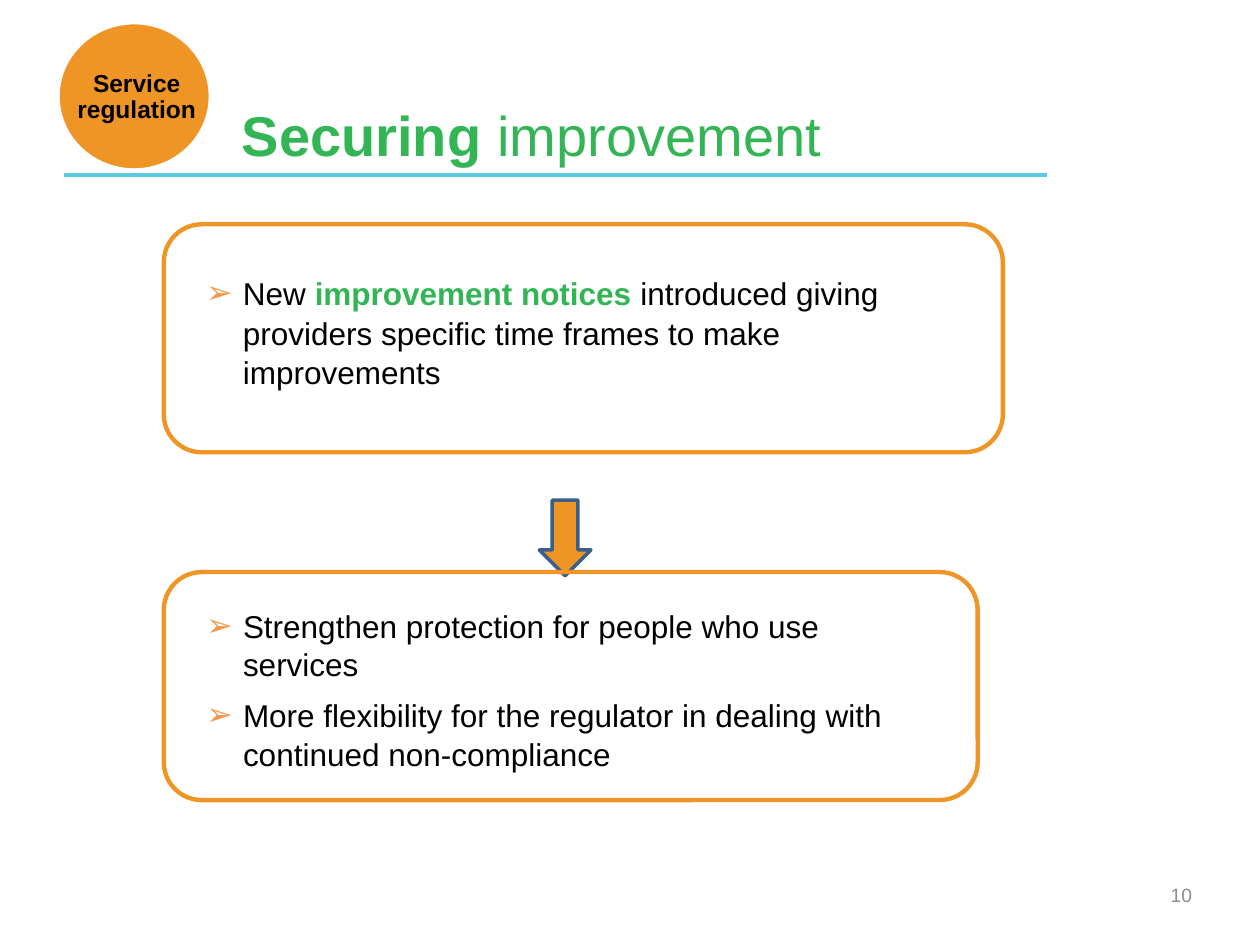
from dataclasses import dataclass

from lxml.etree import SubElement
from pptx import Presentation
from pptx.dml.color import RGBColor
from pptx.enum.shapes import MSO_CONNECTOR, MSO_SHAPE
from pptx.enum.text import MSO_ANCHOR, PP_ALIGN
from pptx.oxml.ns import qn
from pptx.util import Inches, Pt

ORANGE = RGBColor(0xEF, 0x95, 0x26)
BULLET_ORANGE = RGBColor(0xF7, 0x96, 0x46)
GREEN = RGBColor(0x34, 0xB5, 0x55)
CYAN = RGBColor(0x5C, 0xC9, 0xE3)
BLUE = RGBColor(0x3A, 0x5F, 0x8C)
GREY = RGBColor(0x8C, 0x8C, 0x8C)
BLACK = RGBColor(0, 0, 0)
WHITE = RGBColor(0xFF, 0xFF, 0xFF)

COLUMNS, ROWS = 100, 75
CELL = Inches(10) // COLUMNS
FONT = "Arial"


@dataclass
class Box:
    """A rectangle in grid columns and rows."""
    left: float
    top: float
    width: float
    height: float

    def inner(self, left, top, width, height):
        """Return the box at an offset inside this one."""
        return Box(self.left + left, self.top + top, width, height)

    def lengths(self):
        """Return left, top, width and height as slide lengths."""
        return [round(value * CELL) for value in (self.left, self.top, self.width, self.height)]


def add_run(paragraph, text, size, color=BLACK, bold=False):
    """Append one formatted run."""
    run = paragraph.add_run()
    run.text = text
    run.font.name, run.font.size, run.font.bold = FONT, Pt(size), bold
    run.font.color.rgb = color


def add_outline(shapes, kind, box, line_color, line_width, fill=None):
    """Add a preset shape with an outline and an optional fill."""
    shape = shapes.add_shape(kind, *box.lengths())
    shape.shadow.inherit = False
    shape.line.color.rgb, shape.line.width = line_color, Pt(line_width)
    if fill is None:
        shape.fill.background()
    else:
        shape.fill.solid()
        shape.fill.fore_color.rgb = fill


def add_text_frame(shapes, box, anchor=MSO_ANCHOR.TOP):
    """Add a wrapping text box and return its frame."""
    frame = shapes.add_textbox(*box.lengths()).text_frame
    frame.word_wrap, frame.vertical_anchor = True, anchor
    return frame


def add_arrow_bullet(paragraph):
    """Give a paragraph a hanging orange arrowhead bullet."""
    properties = paragraph._p.get_or_add_pPr()
    properties.set("marL", str(Inches(0.29)))
    properties.set("indent", str(-Inches(0.29)))
    color = SubElement(properties, qn("a:buClr"))
    SubElement(color, qn("a:srgbClr"), val=str(BULLET_ORANGE))
    SubElement(properties, qn("a:buFont"), typeface=FONT)
    SubElement(properties, qn("a:buChar"), char="➢")


def add_header(slide, box):
    """Place the title and the rule below it."""
    title = slide.shapes.title
    title.left, title.top, title.width, title.height = box.inner(13.1, 1.1, 61.4, 10.9).lengths()
    frame = title.text_frame
    frame.word_wrap, frame.vertical_anchor = True, MSO_ANCHOR.BOTTOM
    paragraph = frame.paragraphs[0]
    paragraph.alignment = PP_ALIGN.LEFT
    add_run(paragraph, "Securing ", 32, GREEN, True)
    add_run(paragraph, "improvement", 32, GREEN)

    left, top, width, height = box.lengths()
    rule = slide.shapes.add_connector(
        MSO_CONNECTOR.STRAIGHT, left, top + height, left + width, top + height)
    rule.line.color.rgb, rule.line.width = CYAN, Pt(2)
    SubElement(rule._element.spPr, qn("a:effectLst"))


def add_badge(slide, box):
    """Place the round topic badge with its label."""
    shapes = slide.shapes.add_group_shape().shapes
    add_outline(shapes, MSO_SHAPE.OVAL, box, WHITE, 2, ORANGE)
    frame = add_text_frame(shapes, box.inner(0.2, 0.1, box.width, box.height), MSO_ANCHOR.MIDDLE)
    frame.margin_left = frame.margin_right = Inches(0.02)
    frame.margin_top = frame.margin_bottom = Inches(0.02)
    paragraph = frame.paragraphs[0]
    paragraph.alignment, paragraph.line_spacing = PP_ALIGN.CENTER, 0.9
    add_run(paragraph, "Service regulation", 14, bold=True)


def add_panel(slide, box, text_box, bullets, line_spacing):
    """Place a rounded panel with bulleted text inside it."""
    add_outline(slide.shapes, MSO_SHAPE.ROUNDED_RECTANGLE, box, ORANGE, 2.5)
    frame = add_text_frame(slide.shapes, text_box)
    for index, runs in enumerate(bullets):
        paragraph = frame.add_paragraph() if index else frame.paragraphs[0]
        paragraph.line_spacing = line_spacing
        if index:
            paragraph.space_before = Pt(4)
        paragraph.space_after = Pt(3)
        add_arrow_bullet(paragraph)
        for text, color, bold in runs:
            add_run(paragraph, text, 18, color, bold)


def add_slide_number(slide, box):
    """Place the slide number at the right of its box."""
    paragraph = add_text_frame(slide.shapes, box, MSO_ANCHOR.MIDDLE).paragraphs[0]
    paragraph.alignment = PP_ALIGN.RIGHT
    add_run(paragraph, "10", 11, GREY)


def main():
    """Build and save the slide."""
    presentation = Presentation()
    presentation.slide_width, presentation.slide_height = COLUMNS * CELL, ROWS * CELL
    slide = presentation.slides.add_slide(presentation.slide_layouts[5])

    notices = [[
        ("New ", BLACK, False),
        ("improvement notices ", GREEN, True),
        ("introduced giving providers specific time frames to make improvements", BLACK, False),
    ]]
    outcomes = [
        [("Strengthen protection for people who use services", BLACK, False)],
        [("More flexibility for the regulator in dealing with continued non-compliance",
          BLACK, False)],
    ]
    upper = Box(13, 17.8, 66.6, 18.1)
    lower = Box(13, 45.4, 64.6, 18.1)

    add_header(slide, Box(5.1, 1.8, 78, 12.1))
    add_badge(slide, Box(4.6, 1.8, 12.1, 11.7))
    add_outline(slide.shapes, MSO_SHAPE.DOWN_ARROW, Box(42.8, 39.7, 4.1, 6), BLUE, 2, ORANGE)
    add_panel(slide, upper, upper.inner(2.4, 3.3, 60.6, 10.1), notices, 1.05)
    add_panel(slide, lower, lower.inner(2.4, 2.2, 59.1, 14.2), outcomes, 1.02)
    add_slide_number(slide, Box(72.3, 69, 23.3, 4))
    presentation.save("out.pptx")


if __name__ == "__main__":
    main()
